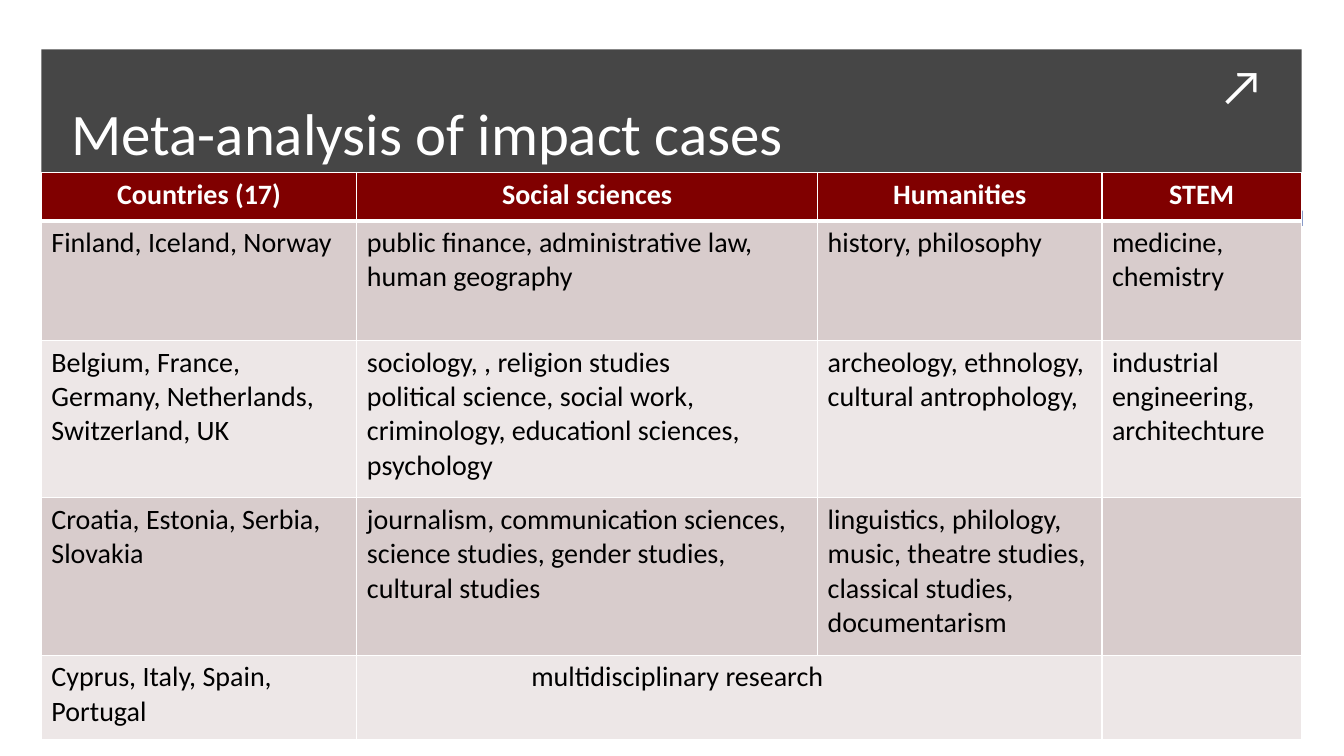
"""Build the slide that tabulates a meta-analysis of impact cases by country group."""
from dataclasses import dataclass
from typing import Any

from lxml import etree
from pptx import Presentation
from pptx import util as u
from pptx.dml.color import RGBColor
from pptx.enum import shapes, text
from pptx.oxml.ns import qn


@dataclass(frozen=True)
class Theme:
    """Colours, font and type sizes of the slide."""
    font: str = "Calibri"
    white: str = "FFFFFF"
    black: str = "000000"
    charcoal: str = "262626"
    maroon: str = "800000"
    blue: str = "297FD5"
    indigo: str = "4A66AC"
    band_dark: str = "D8CCCC"
    band_light: str = "EDE7E7"
    title_size: int = 42
    arrow_size: int = 36
    table_size: int = 20


@dataclass(frozen=True)
class Bar:
    """A filled rectangle, with opacity in percent."""
    left: float
    top: float
    width: float
    height: float
    color: str
    opacity: int = 100


@dataclass(frozen=True)
class Label:
    """A free line of text."""
    left: float
    top: float
    width: float
    height: float
    words: str
    size: int
    frame_format: dict[str, Any]
    para_format: dict[str, Any]


@dataclass(frozen=True)
class Row:
    """A table row with its height, fill and cell texts."""
    height: float
    fill: str
    cells: tuple[str, ...]


THEME = Theme()
LEFT, TABLE_TOP, FULL_WIDTH = 0.41, 1.71, 12.5
STRIPE_TOP, STRIPE_HEIGHT = 2.09, 0.15
COLUMN_WIDTHS = (3.13, 4.57, 2.82, 1.98)
MERGED_INDENT = 1.73

BARS = (
    Bar(LEFT, 0.49, FULL_WIDTH, 1.61, THEME.charcoal, 85),
    Bar(LEFT, STRIPE_TOP, 4, STRIPE_HEIGHT, THEME.maroon),
    Bar(4.41, STRIPE_TOP, 2.33, STRIPE_HEIGHT, THEME.blue),
    Bar(6.75, STRIPE_TOP, 6.17, STRIPE_HEIGHT, THEME.indigo),
)

LABELS = (
    Label(12, 0.49, 0.64, 0.71, "↗", THEME.arrow_size, {"word_wrap": False}, {}),
    Label(0.61, 0.52, 11.39, 1.19, "Meta-analysis of impact cases", THEME.title_size,
          {"word_wrap": True, "vertical_anchor": text.MSO_ANCHOR.BOTTOM},
          {"line_spacing": u.Pt(46)}),
)

ROWS = (
    Row(0.48, THEME.maroon, ("Countries (17)", "Social sciences", "Humanities", "STEM")),
    Row(1.19, THEME.band_dark, (
        "Finland, Iceland, Norway",
        "public finance, administrative law, human geography",
        "history, philosophy",
        "medicine, chemistry")),
    Row(1.56, THEME.band_light, (
        "Belgium, France, Germany, Netherlands, Switzerland, UK",
        "sociology, , religion studies\npolitical science, social work, "
        "criminology, educationl sciences, psychology",
        "archeology, ethnology, cultural antrophology,",
        "industrial engineering, architechture")),
    Row(1.56, THEME.band_dark, (
        "Croatia, Estonia, Serbia, Slovakia",
        "journalism, communication sciences, science studies, gender studies, cultural studies",
        "linguistics, philology,\nmusic, theatre studies, classical studies, documentarism",
        "")),
    Row(0.84, THEME.band_light, (
        "Cyprus, Italy, Spain, Portugal", "multidisciplinary research", "", "")),
)


def apply(target: Any, values: dict[str, Any]) -> None:
    """Set each named attribute on the target."""
    for name, value in values.items():
        setattr(target, name, value)


def write(frame: Any, words: str, size: int, color: str, bold: bool,
          para_format: dict[str, Any]) -> None:
    """Fill a text frame, one paragraph per line of words."""
    frame.text = words
    for para in frame.paragraphs:
        apply(para, para_format)
        for span in para.runs:
            apply(span.font, {"name": THEME.font, "size": u.Pt(size), "bold": bold})
            span.font.color.rgb = RGBColor.from_string(color)


def draw_bar(page: Any, bar: Bar) -> None:
    """Draw one rectangle without outline or shadow."""
    box = page.shapes.add_shape(
        shapes.MSO_SHAPE.RECTANGLE,
        *map(u.Inches, (bar.left, bar.top, bar.width, bar.height)))
    box.shadow.inherit = False
    box.line.fill.background()
    box.fill.solid()
    box.fill.fore_color.rgb = RGBColor.from_string(bar.color)
    if bar.opacity < 100:
        color = box.fill._xPr.find(".//" + qn("a:srgbClr"))
        etree.SubElement(color, qn("a:alpha"), val=str(bar.opacity * 1000))


def draw_label(page: Any, label: Label) -> None:
    """Draw one white text box."""
    box = page.shapes.add_textbox(
        *map(u.Inches, (label.left, label.top, label.width, label.height)))
    apply(box.text_frame, label.frame_format)
    write(box.text_frame, label.words, label.size, THEME.white, False, label.para_format)


def draw_borders(cell: Any, widths: dict[str, int]) -> None:
    """Give a cell white borders of the given point widths."""
    properties = cell._tc.get_or_add_tcPr()
    for position, (side, width) in enumerate(widths.items()):
        line = etree.Element(qn(f"a:ln{side}"), w=str(u.Pt(width)))
        fill = etree.SubElement(line, qn("a:solidFill"))
        etree.SubElement(fill, qn("a:srgbClr"), val=THEME.white)
        properties.insert(position, line)


def draw_table(page: Any, rows: tuple[Row, ...]) -> None:
    """Draw the table of disciplines by country group."""
    height = sum(row.height for row in rows)
    table = page.shapes.add_table(
        len(rows), len(COLUMN_WIDTHS),
        *map(u.Inches, (LEFT, TABLE_TOP, FULL_WIDTH, height))).table
    for column, width in zip(table.columns, COLUMN_WIDTHS):
        column.width = u.Inches(width)
    for row_index, row in enumerate(rows):
        table.rows[row_index].height = u.Inches(row.height)
        header = row_index == 0
        color = THEME.white if header else THEME.black
        para_format = {"alignment": text.PP_ALIGN.CENTER if header else text.PP_ALIGN.LEFT}
        for column_index, words in enumerate(row.cells):
            cell = table.cell(row_index, column_index)
            write(cell.text_frame, words, THEME.table_size, color, header, para_format)
            cell.fill.solid()
            cell.fill.fore_color.rgb = RGBColor.from_string(row.fill)
            draw_borders(cell, {"L": 1, "R": 1, "T": 3 if row_index == 1 else 1,
                                "B": 3 if header else 1})
    last = len(rows) - 1
    merged = table.cell(last, 1)
    merged.merge(table.cell(last, 2))
    merged.margin_left = u.Inches(MERGED_INDENT)


def main() -> None:
    """Build and save the deck."""
    deck = Presentation()
    apply(deck, {"slide_width": u.Inches(13.33), "slide_height": u.Inches(7.5)})
    page = deck.slides.add_slide(deck.slide_layouts[6])
    for bar in BARS:
        draw_bar(page, bar)
    for label in LABELS:
        draw_label(page, label)
    draw_table(page, ROWS)
    deck.save("out.pptx")


if __name__ == "__main__":
    main()
